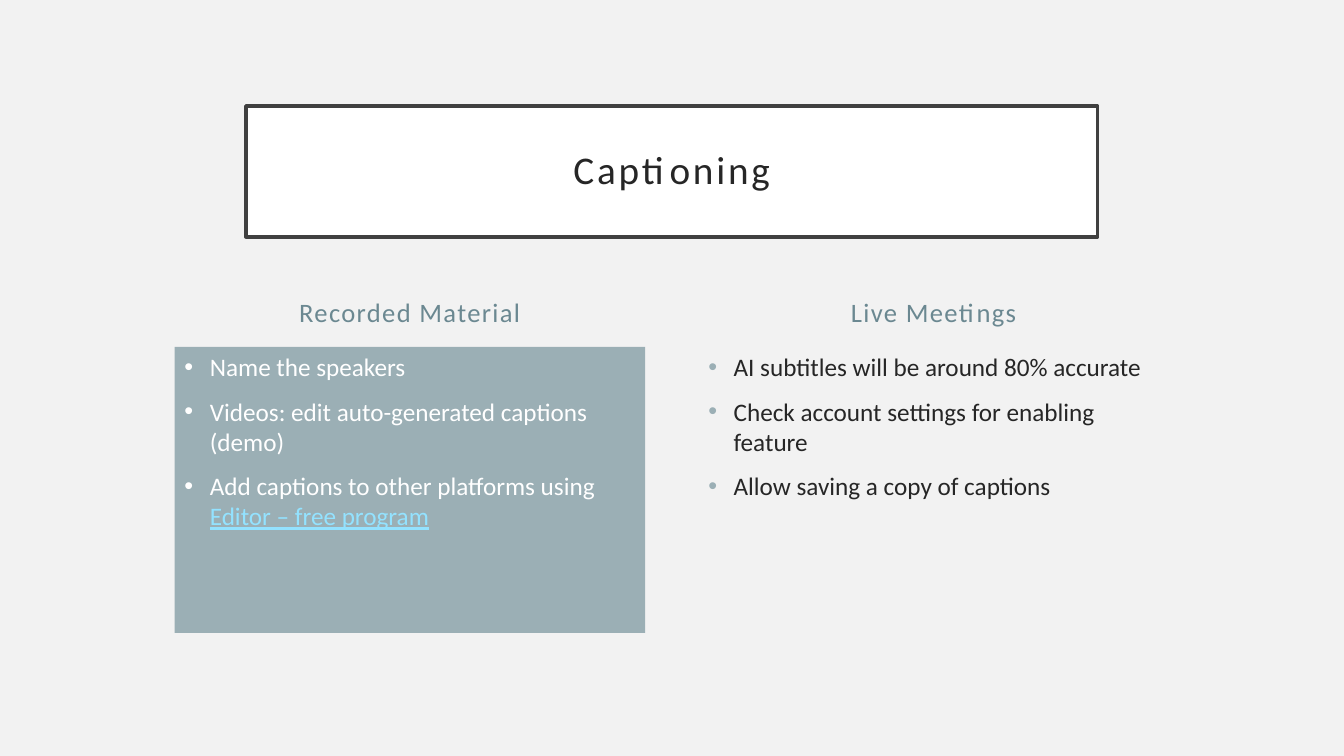
import pptx
import pptx.dml.color
import pptx.enum.shapes
import pptx.enum.text
import pptx.oxml
import pptx.oxml.ns
import pptx.util
from dataclasses import dataclass

Cm = pptx.util.Cm
Pt = pptx.util.Pt
ALIGN = pptx.enum.text.PP_ALIGN
ANCHOR = pptx.enum.text.MSO_ANCHOR


@dataclass
class Theme:
    font: str = "Calibri"
    background: str = "F2F2F2"
    ink: str = "262626"
    white: str = "FFFFFF"
    frame: str = "404040"
    heading: str = "6B8891"
    accent: str = "9BAFB5"
    link: str = "93E2FF"
    title_size: int = 28
    heading_size: int = 19
    body_size: int = 18


def rgb(value):
    return pptx.dml.color.RGBColor.from_string(value)


def apply(target, formats):
    for name, value in formats.items():
        setattr(target, name, value)


class SlideBuilder:
    def __init__(self, slide, theme):
        self.slide = slide
        self.theme = theme
        fill = slide.background.fill
        fill.solid()
        fill.fore_color.rgb = rgb(theme.background)

    def run(self, paragraph, text, size, color, spacing=0, underline=None):
        run = paragraph.add_run()
        run.text = text
        apply(run.font, {"name": self.theme.font, "size": Pt(size),
                         "underline": underline})
        run.font.color.rgb = rgb(color)
        if spacing:
            run.font._element.set("spc", str(spacing * 100))

    def bullet(self, paragraph, color):
        properties = paragraph._p.get_or_add_pPr()
        properties.set("marL", str(Cm(0.64)))
        properties.set("indent", str(-Cm(0.64)))
        namespace = pptx.oxml.ns.nsdecls("a")
        for xml in (
            f'<a:buClr {namespace}><a:srgbClr val="{color}"/></a:buClr>',
            f'<a:buFont {namespace} typeface="Arial"/>',
            f'<a:buChar {namespace} char="•"/>',
        ):
            properties.append(pptx.oxml.parse_xml(xml))

    def title(self, text, left, top, width, height):
        title = self.slide.shapes.title
        apply(title, {"left": Cm(left), "top": Cm(top),
                      "width": Cm(width), "height": Cm(height)})
        title.fill.solid()
        title.fill.fore_color.rgb = rgb(self.theme.white)
        title.line.color.rgb = rgb(self.theme.frame)
        title.line.width = Pt(2.5)
        margins = dict.fromkeys(("margin_left", "margin_top",
                                 "margin_right", "margin_bottom"), Cm(0.51))
        apply(title.text_frame, {
            **margins, "word_wrap": True, "vertical_anchor": ANCHOR.MIDDLE,
            "auto_size": pptx.enum.text.MSO_AUTO_SIZE.NONE})
        paragraph = title.text_frame.paragraphs[0]
        apply(paragraph, {"alignment": ALIGN.CENTER, "line_spacing": 0.9})
        self.run(paragraph, text, self.theme.title_size, self.theme.ink, 2)

    def heading(self, text, left, top, width, height):
        box = self.slide.shapes.add_textbox(
            Cm(left), Cm(top), Cm(width), Cm(height))
        apply(box.text_frame, {"word_wrap": True,
                               "vertical_anchor": ANCHOR.BOTTOM})
        paragraph = box.text_frame.paragraphs[0]
        apply(paragraph, {"alignment": ALIGN.CENTER, "space_before": Pt(10)})
        self.run(paragraph, text, self.theme.heading_size,
                 self.theme.heading, 1)

    def bullet_list(self, items, left, top, width, height, filled):
        theme = self.theme
        place = Cm(left), Cm(top), Cm(width), Cm(height)
        if filled:
            panel = self.slide.shapes.add_shape(
                pptx.enum.shapes.MSO_SHAPE.RECTANGLE, *place)
            panel.shadow.inherit = False
            panel.fill.solid()
            panel.fill.fore_color.rgb = rgb(theme.accent)
            panel.line.fill.background()
            text_color, bullet_color = theme.white, theme.white
        else:
            panel = self.slide.shapes.add_textbox(*place)
            text_color, bullet_color = theme.ink, theme.accent
        frame = panel.text_frame
        apply(frame, {"word_wrap": True, "vertical_anchor": ANCHOR.TOP})
        for index, (text, link) in enumerate(items):
            paragraph = frame.add_paragraph() if index else frame.paragraphs[0]
            apply(paragraph, {"alignment": ALIGN.LEFT, "space_before": Pt(10)})
            self.bullet(paragraph, bullet_color)
            self.run(paragraph, text, theme.body_size, text_color)
            if link:
                self.run(paragraph, link, theme.body_size, theme.link,
                         underline=True)


def main():
    presentation = pptx.Presentation()
    apply(presentation, {"slide_width": Cm(33.87), "slide_height": Cm(19.05)})
    slide = presentation.slides.add_slide(presentation.slide_layouts[5])
    builder = SlideBuilder(slide, Theme())
    builder.title("Captioning", 6.2, 2.67, 21.46, 3.3)

    columns = [
        ("Recorded Material", 4.4, True, [
            ("Name the speakers", ""),
            ("Videos: edit auto-generated captions (demo)", ""),
            ("Add captions to other platforms using ", "Editor – free program"),
        ]),
        ("Live Meetings", 17.6, False, [
            ("AI subtitles will be around 80% accurate", ""),
            ("Check account settings for enabling feature", ""),
            ("Allow saving a copy of captions", ""),
        ]),
    ]
    for heading, left, filled, items in columns:
        builder.heading(heading, left, 6.43, 11.86, 1.96)
        builder.bullet_list(items, left, 8.74, 11.86, 7.21, filled)

    presentation.save("out.pptx")


if __name__ == "__main__":
    main()
